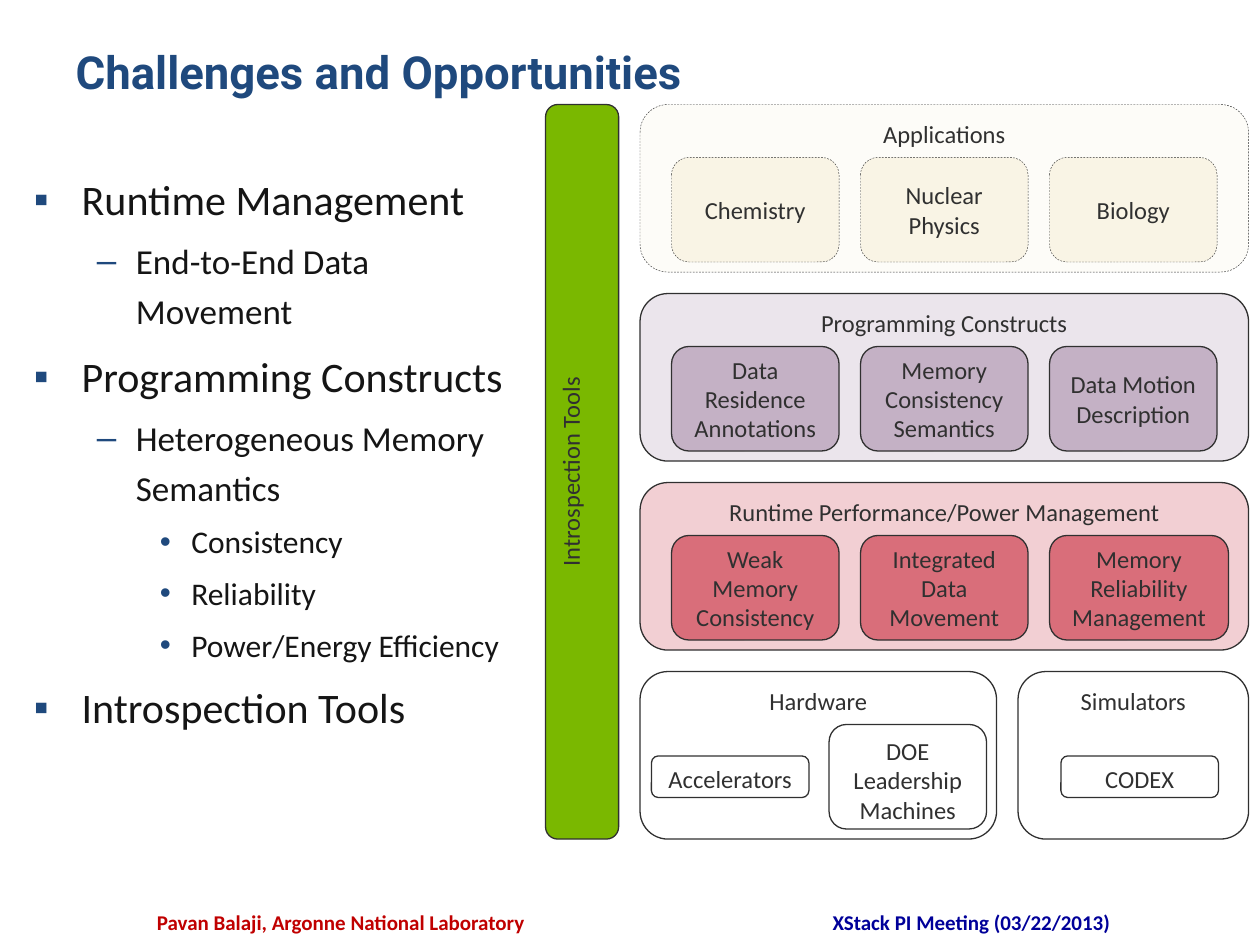
from dataclasses import dataclass
from typing import Optional

from lxml import etree
from pptx import Presentation
from pptx.dml.color import RGBColor
from pptx.enum.dml import MSO_LINE
from pptx.enum.shapes import MSO_SHAPE
from pptx.enum.text import MSO_ANCHOR, PP_ALIGN
from pptx.oxml.ns import qn
from pptx.util import Inches, Pt

ROUND_RECT = MSO_SHAPE.ROUNDED_RECTANGLE
DASH = MSO_LINE.DASH
TOP, MIDDLE = MSO_ANCHOR.TOP, MSO_ANCHOR.MIDDLE
LEFT, CENTER = PP_ALIGN.LEFT, PP_ALIGN.CENTER

NAVY = RGBColor(0x1F, 0x49, 0x7D)
INK = RGBColor(0x15, 0x15, 0x15)
GRAY = RGBColor(0x30, 0x30, 0x30)
RED = RGBColor(0xC0, 0x00, 0x00)
BLUE = RGBColor(0x00, 0x00, 0x99)
GREEN = RGBColor(0x7A, 0xB8, 0x00)
PALE_ROSE = RGBColor(0xF2, 0xCF, 0xD3)
ROSE = RGBColor(0xD9, 0x6E, 0x7A)
PALE_MAUVE = RGBColor(0xEB, 0xE5, 0xEC)
MAUVE = RGBColor(0xC4, 0xB1, 0xC5)
PALE_SAND = RGBColor(0xF7, 0xEE, 0xD4)
SAND = RGBColor(0xE8, 0xCD, 0x7E)

BODY_FONT = "Calibri"
LAYER_LEFT, LAYER_TOP, LAYER_W, LAYER_H = 5.08, 0.83, 4.83, 1.33
PITCH = 1.5  # between layers, and between the topics of a layer
TOPIC_LEFT, TOPIC_DROP, TOPIC_W, TOPIC_H = 5.33, 0.42, 1.33, 0.83


@dataclass
class Box:
    text: str
    left: float
    top: float
    width: float
    height: float
    fill: Optional[RGBColor] = None
    anchor: MSO_ANCHOR = TOP
    faint: bool = False


@dataclass
class Layer:
    title: str
    row: int
    fill: RGBColor
    topic_fill: RGBColor
    topics: tuple[str, ...]
    last_width: float = TOPIC_W
    faint: bool = False


@dataclass
class Level:
    size: int
    margin: float
    hang: float
    bullet: str


LEVELS = (Level(24, 0.38, 0.38, "▪"), Level(20, 0.81, 0.31, "–"), Level(18, 1.25, 0.25, "•"))

OUTLINE = (
    (0, "Runtime Management"),
    (1, "End-to-End Data Movement"),
    (0, "Programming Constructs"),
    (1, "Heterogeneous Memory Semantics"),
    (2, "Consistency"),
    (2, "Reliability"),
    (2, "Power/Energy Efficiency"),
    (0, "Introspection Tools"),
)

PLATFORM = (
    Box("Hardware", LAYER_LEFT, 5.33, 2.83, LAYER_H),
    Box("Accelerators", 5.17, 6, 1.25, 0.33),
    Box("DOE Leadership Machines", 6.58, 5.75, 1.25, TOPIC_H),
    Box("Simulators", 8.08, 5.33, 1.83, LAYER_H),
    Box("CODEX", 8.42, 6, 1.25, 0.33),
)

LAYERS = (
    Layer("Runtime Performance/Power Management", 2, PALE_ROSE, ROSE,
          ("Weak Memory Consistency", "Integrated Data Movement", "Memory Reliability Management"),
          last_width=1.42),
    Layer("Programming Constructs", 1, PALE_MAUVE, MAUVE,
          ("Data Residence Annotations", "Memory Consistency Semantics", "Data Motion Description")),
    Layer("Applications", 0, PALE_SAND, SAND, ("Chemistry", "Nuclear Physics", "Biology"),
          faint=True),
)


def add_run(p, text: str, size: float, color: RGBColor, bold: bool = False,
            font: str = BODY_FONT) -> None:
    r = p.add_run()
    r.text = text
    r.font.name, r.font.size, r.font.bold = font, Pt(size), bold
    r.font.color.rgb = color


def add_box(s, box: Box):
    sp = s.shapes.add_shape(ROUND_RECT, Inches(box.left), Inches(box.top),
                            Inches(box.width), Inches(box.height))
    sp.shadow.inherit = False
    if box.fill is None:
        sp.fill.background()
    else:
        sp.fill.solid()
        sp.fill.fore_color.rgb = box.fill
    sp.line.color.rgb = GRAY
    sp.line.width = Pt(0.75)
    if box.faint:
        sp.line.width = Pt(0.25)
        sp.line.dash_style = DASH
        color = sp._element.spPr.find(qn("a:solidFill")).find(qn("a:srgbClr"))
        etree.SubElement(color, qn("a:alpha"), val="15000")
    tf = sp.text_frame
    tf.word_wrap = True
    tf.vertical_anchor = box.anchor
    p = tf.paragraphs[0]
    p.alignment = CENTER
    add_run(p, box.text, 14, GRAY)
    return sp


def add_layer(s, layer: Layer) -> None:
    top = LAYER_TOP + PITCH * layer.row
    add_box(s, Box(layer.title, LAYER_LEFT, top, LAYER_W, LAYER_H, layer.fill, faint=layer.faint))
    last = len(layer.topics) - 1
    for i, text in enumerate(layer.topics):
        width = layer.last_width if i == last else TOPIC_W
        add_box(s, Box(text, TOPIC_LEFT + PITCH * i, top + TOPIC_DROP, width, TOPIC_H,
                       layer.topic_fill, MIDDLE, layer.faint))


def add_text_box(s, left: float, top: float, width: float, height: float):
    tf = s.shapes.add_textbox(Inches(left), Inches(top), Inches(width), Inches(height)).text_frame
    tf.word_wrap = True
    return tf


def add_footer(s, text: str, left: float, width: float, color: RGBColor) -> None:
    p = add_text_box(s, left, 7.17, width, 0.25).paragraphs[0]
    p.alignment = CENTER
    add_run(p, text, 12, color, bold=True)


def set_bullet(p, level: Level) -> None:
    pPr = p._p.get_or_add_pPr()
    pPr.set("marL", str(Inches(level.margin)))
    pPr.set("indent", str(-Inches(level.hang)))
    color = etree.SubElement(pPr, qn("a:buClr"))
    etree.SubElement(color, qn("a:srgbClr"), val=str(NAVY))
    etree.SubElement(pPr, qn("a:buFont"), typeface="Arial")
    etree.SubElement(pPr, qn("a:buChar"), char=level.bullet)


def add_outline(s) -> None:
    tf = add_text_box(s, 0.17, 1.25, 4.08, 5.67)
    for i, (depth, text) in enumerate(OUTLINE):
        level = LEVELS[depth]
        p = tf.add_paragraph() if i else tf.paragraphs[0]
        p.level = depth
        set_bullet(p, level)
        p.line_spacing = 1.2
        if i:
            p.space_before = Pt(0.2 * level.size)
        add_run(p, text, level.size, INK)


def add_title(s) -> None:
    title = s.shapes.title
    title.left, title.top = Inches(0.5), Inches(0.3)
    title.width, title.height = Inches(9), Inches(0.87)
    tf = title.text_frame
    tf.vertical_anchor = TOP
    p = tf.paragraphs[0]
    p.alignment = LEFT
    add_run(p, "Challenges and Opportunities", 26, NAVY, bold=True, font="Roboto")


def main() -> None:
    prs = Presentation()
    prs.slide_width, prs.slide_height = Inches(10), Inches(7.5)
    s = prs.slides.add_slide(prs.slide_layouts[5])
    add_title(s)
    add_outline(s)
    add_footer(s, "Pavan Balaji, Argonne National Laboratory", 1.08, 3.25, RED)
    add_footer(s, "XStack PI Meeting (03/22/2013)", 5.75, 3.92, BLUE)
    for box in PLATFORM:
        add_box(s, box)
    for layer in LAYERS:
        add_layer(s, layer)
    bar = add_box(s, Box("Introspection Tools", 4.33, LAYER_TOP, 0.58, 5.83, GREEN))
    bar.text_frame._txBody.bodyPr.set("vert", "vert270")
    prs.save("out.pptx")


if __name__ == "__main__":
    main()
